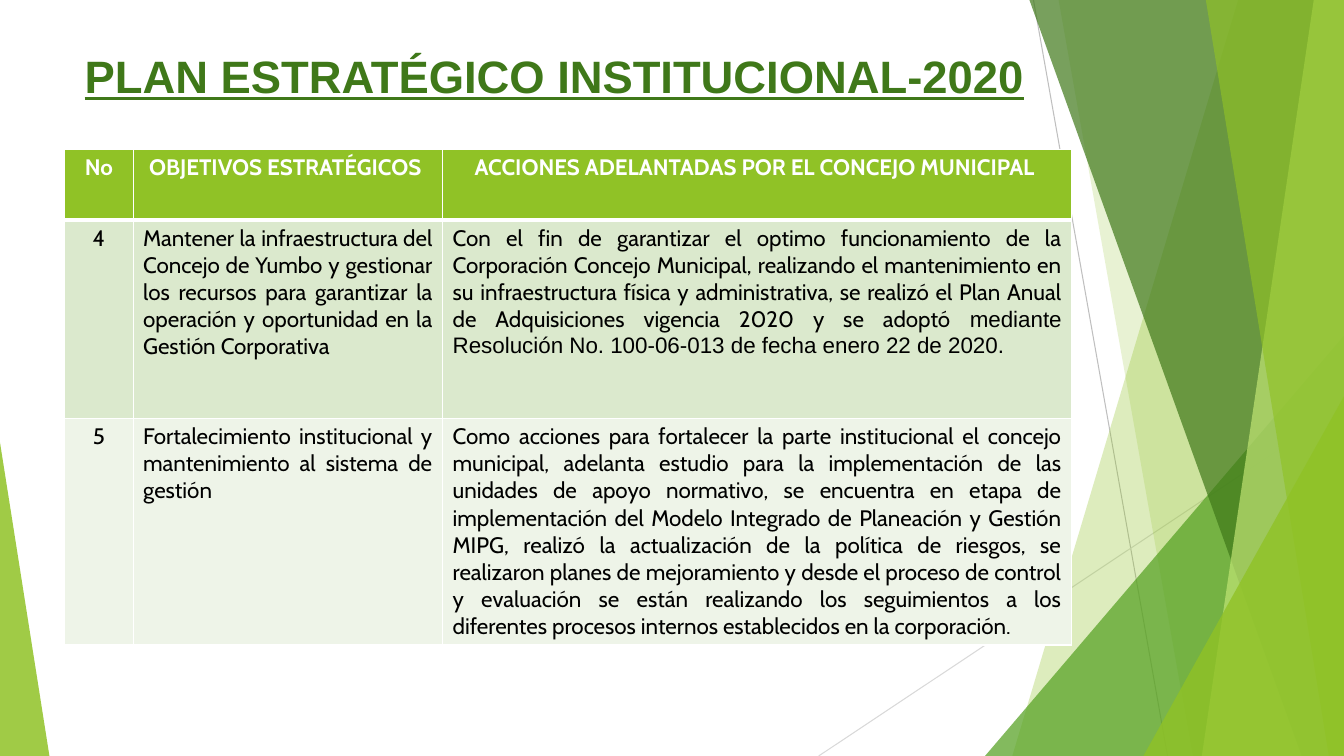
from lxml import etree
from pptx import Presentation
from pptx.dml.color import RGBColor
from pptx.enum.shapes import MSO_CONNECTOR, MSO_SHAPE
from pptx.enum.text import MSO_ANCHOR, MSO_AUTO_SIZE, PP_ALIGN
from pptx.oxml.ns import qn
from pptx.util import Inches, Pt

STRAIGHT = MSO_CONNECTOR.STRAIGHT
TRIANGLE = MSO_SHAPE.ISOSCELES_TRIANGLE
MIDDLE, NO_AUTOFIT = MSO_ANCHOR.MIDDLE, MSO_AUTO_SIZE.NONE
LEFT, CENTER, JUSTIFY = PP_ALIGN.LEFT, PP_ALIGN.CENTER, PP_ALIGN.JUSTIFY

WHITE = RGBColor(0xFF, 0xFF, 0xFF)
BLACK = RGBColor(0x00, 0x00, 0x00)
LIME = RGBColor(0x90, 0xC2, 0x26)
PALE_LIME = RGBColor(0xC0, 0xE4, 0x74)
GREEN = RGBColor(0x54, 0xA0, 0x21)
DARK_GREEN = RGBColor(0x3F, 0x78, 0x19)
DARK_BAND = RGBColor(0xDB, 0xE9, 0xCD)
LIGHT_BAND = RGBColor(0xEE, 0xF4, 0xE8)
GRAY = RGBColor(0xBF, 0xBF, 0xBF)
LIGHT_GRAY = RGBColor(0xD9, 0xD9, 0xD9)

WIDTH, HEIGHT = 13.33, 7.5
TITLE = "PLAN ESTRATÉGICO INSTITUCIONAL-2020"
TITLE_FONT = {"name": "Arial", "size": Pt(32.4), "bold": True, "underline": True}
HEADER_FONT = {"name": "Cabin", "size": Pt(16), "bold": True}
BODY_FONT = {"name": "Cabin", "size": Pt(16), "bold": False}
RESOLUTION_FONT = {**BODY_FONT, "name": "Arial"}

COLUMN_WIDTHS = (0.68, 3.07, 6.24)
ROW_HEIGHTS = (0.7, 1.97, 2.25)
ROW_FILLS = (LIME, DARK_BAND, LIGHT_BAND)
PLAN = (
    ("No", "OBJETIVOS ESTRATÉGICOS ", "ACCIONES ADELANTADAS POR EL CONCEJO MUNICIPAL "),
    (
        "4",
        "Mantener la infraestructura del Concejo de Yumbo y gestionar los recursos "
        "para garantizar la operación y oportunidad en la Gestión Corporativa",
        "Con el fin de garantizar el optimo funcionamiento de la Corporación Concejo "
        "Municipal, realizando el mantenimiento en su infraestructura física y "
        "administrativa, se realizó el Plan Anual de Adquisiciones vigencia 2020 y se "
        "adoptó ",
    ),
    (
        "5",
        "Fortalecimiento institucional y mantenimiento al sistema de gestión",
        "Como acciones para fortalecer la parte institucional el concejo municipal, "
        "adelanta estudio para la implementación de las unidades de apoyo normativo, "
        "se encuentra en etapa de implementación del Modelo Integrado de Planeación y "
        "Gestión MIPG, realizó la actualización de la política de riesgos, se "
        "realizaron planes de mejoramiento y desde el proceso de control y evaluación "
        "se están realizando los seguimientos a los diferentes procesos internos "
        "establecidos en la corporación. ",
    ),
)
RESOLUTION = "mediante Resolución No. 100-06-013 de fecha enero 22 de 2020."


def add_run(paragraph, text, font, color):
    """Append a run with the given font values and colour."""
    run = paragraph.add_run()
    run.text = text
    for name, value in font.items():
        setattr(run.font, name, value)
    run.font.color.rgb = color


def paint(facet, color, opacity):
    """Give a facet a translucent fill, no line and no shadow."""
    facet.shadow.inherit = False
    facet.line.fill.background()
    facet.fill.solid()
    facet.fill.fore_color.rgb = color
    fill_color = facet.fill._xPr.find(qn("a:solidFill"))[0]
    etree.SubElement(fill_color, qn("a:alpha"), val=str(opacity * 1000))


def add_ray(shapes, start, end, color):
    """Draw a thin line between two points."""
    ray = shapes.add_connector(STRAIGHT, *map(Inches, start + end))
    ray.line.color.rgb = color
    ray.line.width = Pt(0.75)
    etree.SubElement(ray._element.spPr, qn("a:effectLst"))


def add_band(shapes, top_x, bottom_x, right, bottom, color, opacity):
    """Draw a slanted full-height band that reaches the right edge."""
    builder = shapes.build_freeform(Inches(top_x), 0)
    corners = ((right, 0), (right, bottom), (bottom_x, bottom))
    builder.add_line_segments([(Inches(x), Inches(y)) for x, y in corners])
    paint(builder.convert_to_shape(), color, opacity)


def add_corner(shapes, left, top, right, bottom, apex, color, opacity):
    """Draw a right triangle whose apex is at the left (0) or right (1)."""
    box = map(Inches, (left, top, right - left, bottom - top))
    corner = shapes.add_shape(TRIANGLE, *box)
    corner.adjustments[0] = apex
    paint(corner, color, opacity)


def add_facets(shapes, right, bottom):
    """Draw the green facets along both sides of the slide."""
    add_ray(shapes, (10.25, 0), (11.58, bottom), GRAY)
    add_ray(shapes, (right, 4.03), (8.12, bottom), LIGHT_GRAY)
    add_band(shapes, 12.28, 10.04, right, bottom, LIME, 30)
    add_band(shapes, 10.5, 11.83, right, bottom, LIME, 20)
    add_corner(shapes, 9.77, 3.33, right, bottom, 1, GREEN, 72)
    add_band(shapes, 10.21, 12.91, right, bottom, DARK_GREEN, 70)
    add_band(shapes, 13.03, 11.92, right, bottom, PALE_LIME, 70)
    add_band(shapes, 11.96, 13.18, right, bottom, LIME, 65)
    add_corner(shapes, 11.34, 3.93, right, bottom, 1, LIME, 80)
    add_corner(shapes, 0, 4.39, 0.49, bottom, 0, LIME, 85)


def fill_title(title, left, top, width, height):
    """Place and format the slide title."""
    box = {"left": left, "top": top, "width": width, "height": height}
    for name, value in box.items():
        setattr(title, name, Inches(value))
    frame = title.text_frame
    frame.auto_size = NO_AUTOFIT
    frame.vertical_anchor = MIDDLE
    frame.word_wrap = True
    frame.paragraphs[0].alignment = LEFT
    add_run(frame.paragraphs[0], TITLE, TITLE_FONT, DARK_GREEN)


def set_borders(cell, widths):
    """Add white borders to a cell, keyed by side."""
    properties = cell._tc.get_or_add_tcPr()
    for side, width in widths.items():
        border = etree.SubElement(properties, qn(f"a:ln{side}"), w=str(Pt(width)))
        fill = etree.SubElement(border, qn("a:solidFill"))
        etree.SubElement(fill, qn("a:srgbClr"), val=str(WHITE))


def add_plan_table(shapes, left, top):
    """Build the table of objectives and actions."""
    box = map(Inches, (left, top, sum(COLUMN_WIDTHS), sum(ROW_HEIGHTS)))
    table = shapes.add_table(len(PLAN), len(COLUMN_WIDTHS), *box).table
    table.first_row = table.horz_banding = False
    for column, width in zip(table.columns, COLUMN_WIDTHS):
        column.width = Inches(width)
    for row, height in zip(table.rows, ROW_HEIGHTS):
        row.height = Inches(height)
    for r, texts in enumerate(PLAN):
        font, color = (BODY_FONT, BLACK) if r else (HEADER_FONT, WHITE)
        for c, text in enumerate(texts):
            cell = table.cell(r, c)
            set_borders(cell, {"L": 1, "R": 1, "T": 3 if r == 1 else 1, "B": 1 if r else 3})
            cell.fill.solid()
            cell.fill.fore_color.rgb = ROW_FILLS[r]
            paragraph = cell.text_frame.paragraphs[0]
            paragraph.alignment = JUSTIFY if r and c else CENTER
            add_run(paragraph, text, font, color)
    add_run(table.cell(1, 2).text_frame.paragraphs[0], RESOLUTION, RESOLUTION_FONT, BLACK)


def main():
    """Build and save the slide."""
    deck = Presentation()
    deck.slide_width, deck.slide_height = Inches(WIDTH), Inches(HEIGHT)
    slide = deck.slides.add_slide(deck.slide_layouts.get_by_name("Title Only"))
    add_facets(slide.shapes, WIDTH, HEIGHT)
    add_plan_table(slide.shapes, 0.64, 1.48)
    fill_title(slide.shapes.title, 0.74, 0.37, 9.89, 0.76)
    deck.save("out.pptx")


if __name__ == "__main__":
    main()
